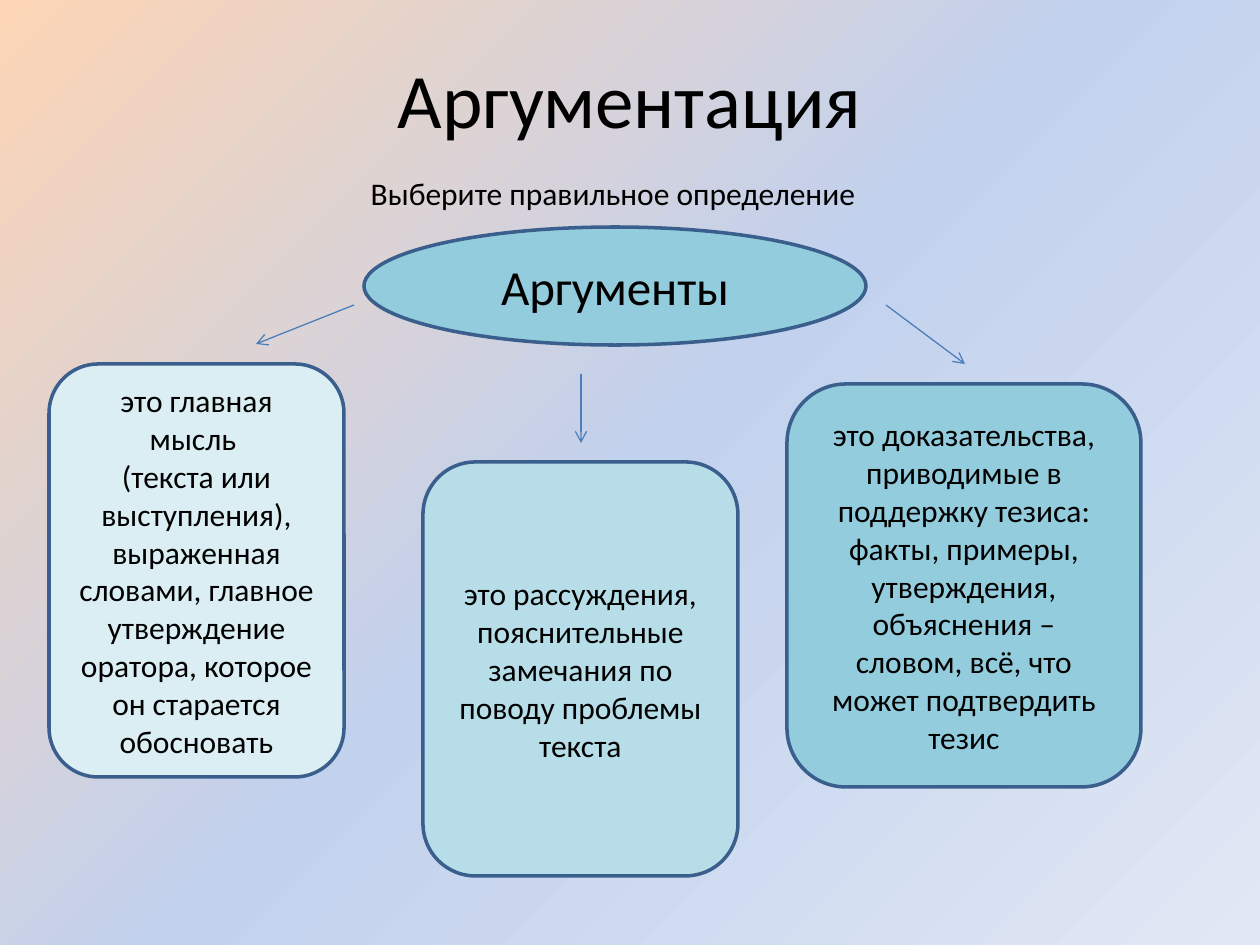
from copy import deepcopy

from lxml import etree
from pptx import Presentation, util as u
from pptx.dml.color import RGBColor
from pptx.enum import shapes, text
from pptx.oxml.ns import qn

PX = 914400 / 126
BLACK = RGBColor(0x00, 0x00, 0x00)
OUTLINE = RGBColor(0x3A, 0x5F, 0x8C)
ARROW = RGBColor(0x4B, 0x7E, 0xBC)
PALE = RGBColor(0xDB, 0xEE, 0xF4)
LIGHT = RGBColor(0xB7, 0xDE, 0xE8)
TEAL = RGBColor(0x93, 0xCD, 0xDD)
PEACH = RGBColor(0xFC, 0xD5, 0xB5)
SKY = RGBColor(0xC2, 0xD1, 0xED)
MIST = RGBColor(0xE1, 0xE8, 0xF5)


def emu(*lengths):
    return [u.Emu(round(length * PX)) for length in lengths]


def write(shape, lines, size, anchor=text.MSO_ANCHOR.MIDDLE):
    frame = shape.text_frame
    frame.word_wrap = True
    frame.vertical_anchor = anchor
    frame.text = lines
    for paragraph in frame.paragraphs:
        paragraph.alignment = text.PP_ALIGN.CENTER
        paragraph.font.name = "Calibri"
        paragraph.font.size = u.Pt(size)
        paragraph.font.color.rgb = BLACK


presentation = Presentation()
presentation.slide_width, presentation.slide_height = emu(1260, 945)
slide = presentation.slides.add_slide(presentation.slide_layouts[6])

# Background: diagonal gradient with three stops
background = slide.background.fill
background.gradient()
background.gradient_angle = 315
stop_list = slide.element.find(".//" + qn("a:gsLst"))
stop_list.append(deepcopy(stop_list[0]))
for stop, position, color in zip(background.gradient_stops, (0, 0.5, 1), (PEACH, SKY, MIST)):
    stop.position = position
    stop.color.rgb = color

# Title and task
title = slide.shapes.add_textbox(*emu(63, 38, 1134, 120))
write(title, "Аргументация", 44)
task = slide.shapes.add_textbox(*emu(29, 168, 1168, 60))
write(task, "Выберите правильное определение", 18, text.MSO_ANCHOR.TOP)

# Three definitions and the term
ROUNDED = shapes.MSO_SHAPE.ROUNDED_RECTANGLE
OVAL = shapes.MSO_SHAPE.OVAL
nodes = [
    (ROUNDED, (49, 364, 295, 413), PALE, 18,
     "это главная мысль \n(текста или выступления), выраженная словами, "
     "главное утверждение оратора, которое он старается обосновать"),
    (ROUNDED, (423, 462, 315, 414), LIGHT, 18,
     "это рассуждения, пояснительные замечания по поводу проблемы текста"),
    (ROUNDED, (787, 384, 354, 403), TEAL, 18,
     "это доказательства, приводимые в поддержку тезиса: факты, примеры, "
     "утверждения, объяснения – словом, всё, что может подтвердить тезис"),
    (OVAL, (364, 227, 502, 118), TEAL, 28, "Аргументы"),
]
for kind, box, color, size, words in nodes:
    shape = slide.shapes.add_shape(kind, *emu(*box))
    shape.shadow.inherit = False
    shape.fill.solid()
    shape.fill.fore_color.rgb = color
    shape.line.color.rgb = OUTLINE
    shape.line.width = u.Pt(2)
    write(shape, words, size)

# Arrows from the term to the definitions
for ends in [(354, 305, 256, 344), (886, 305, 965, 364), (581, 374, 581, 443)]:
    arrow = slide.shapes.add_connector(shapes.MSO_CONNECTOR.STRAIGHT, *emu(*ends))
    arrow.line.color.rgb = ARROW
    arrow.line.width = u.Pt(0.75)
    etree.SubElement(arrow.line._get_or_add_ln(), qn("a:tailEnd"), type="arrow")
    etree.SubElement(arrow.element.spPr, qn("a:effectLst"))

presentation.save("out.pptx")
